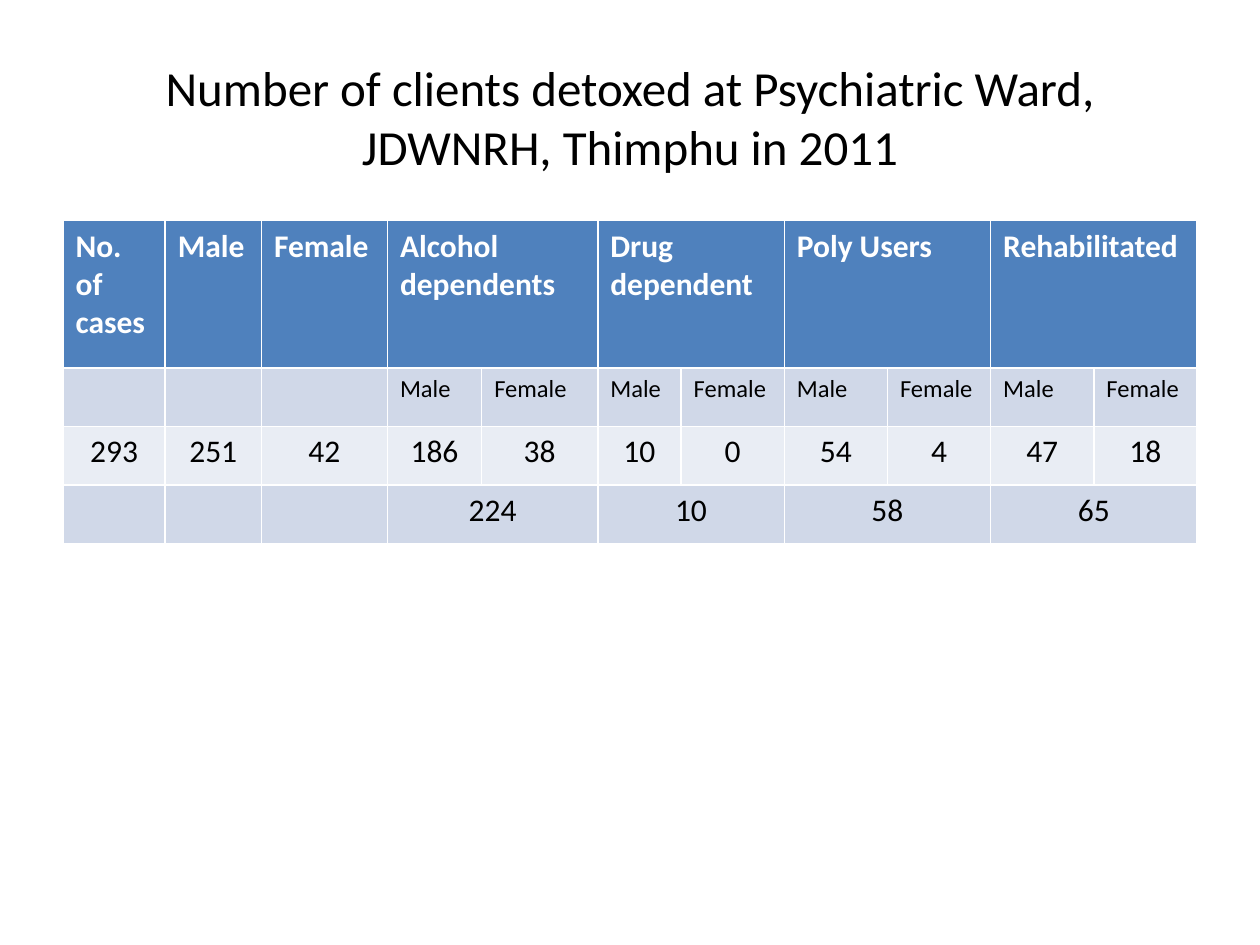
from pptx import Presentation
from pptx.dml.color import RGBColor
from pptx.enum.text import MSO_ANCHOR, PP_ALIGN
from pptx.util import Cm, Pt

# Content
TITLE = "Number of clients detoxed at Psychiatric Ward, JDWNRH, Thimphu in 2011"
SINGLES = [("No. of cases", "293"), ("Male", "251"), ("Female", "42")]
GROUPS = [  # heading, male, female, total
    ("Alcohol dependents", "186", "38", "224"),
    ("Drug dependent", "10", "0", "10"),
    ("Poly Users", "54", "4", "58"),
    ("Rehabilitated", "47", "18", "65"),
]

# Look
FONT = "Calibri"
COLORS = {"header": "4F81BD", "dark band": "D0D8E8", "light band": "E9EDF4",
          "white": "FFFFFF", "black": "000000"}
COLUMN_WIDTHS = [2.06, 1.94, 2.54, 1.9, 2.34, 1.68, 2.08] + [2.08] * 4
ROW_HEIGHTS = [2.97, 1.18, 1.18, 1.18]
ROW_STYLES = [  # fill, text colour, size, bold, alignment
    ("header", "white", 18, True, PP_ALIGN.LEFT),
    ("dark band", "black", 14, False, PP_ALIGN.LEFT),
    ("light band", "black", 18, False, PP_ALIGN.CENTER),
    ("dark band", "black", 18, False, PP_ALIGN.CENTER),
]


def color(name):
    return RGBColor.from_string(COLORS[name])


def write(para, text, size, tint, bold, align):
    para.alignment = align
    span = para.add_run()
    span.text = text
    span.font.name = FONT
    span.font.size = Pt(size)
    span.font.bold = bold
    span.font.color.rgb = color(tint)


deck = Presentation()
deck.slide_width, deck.slide_height = Cm(25.4), Cm(19.05)
page = deck.slides.add_slide(deck.slide_layouts[5])

# Title
title = page.shapes.title
title.left, title.top, title.width, title.height = Cm(1.27), Cm(0.76), Cm(22.86), Cm(3.18)
title.text_frame.vertical_anchor = MSO_ANCHOR.MIDDLE
write(title.text_frame.paragraphs[0], TITLE, 28, "black", False, PP_ALIGN.CENTER)

# Table grid
table = page.shapes.add_table(
    len(ROW_HEIGHTS), len(COLUMN_WIDTHS), Cm(1.27), Cm(4.45),
    Cm(sum(COLUMN_WIDTHS)), Cm(sum(ROW_HEIGHTS))).table
for column, width in zip(table.columns, COLUMN_WIDTHS):
    column.width = Cm(width)
for row, height, style in zip(table.rows, ROW_HEIGHTS, ROW_STYLES):
    row.height = Cm(height)
    for cell in row.cells:
        cell.fill.solid()
        cell.fill.fore_color.rgb = color(style[0])


def fill_cell(row, column, text):
    _, tint, size, bold, align = ROW_STYLES[row]
    para = table.cell(row, column).text_frame.paragraphs[0]
    write(para, text, size, tint, bold, align)


# Single columns
for column, (heading, count) in enumerate(SINGLES):
    fill_cell(0, column, heading)
    fill_cell(2, column, count)

# Male and female pairs under a merged heading and over a merged total
for index, (heading, male, female, total) in enumerate(GROUPS):
    left = len(SINGLES) + 2 * index
    for row, text in ((0, heading), (3, total)):
        table.cell(row, left).merge(table.cell(row, left + 1))
        fill_cell(row, left, text)
    for column, label, count in ((left, "Male", male), (left + 1, "Female", female)):
        fill_cell(1, column, label)
        fill_cell(2, column, count)

deck.save("out.pptx")
